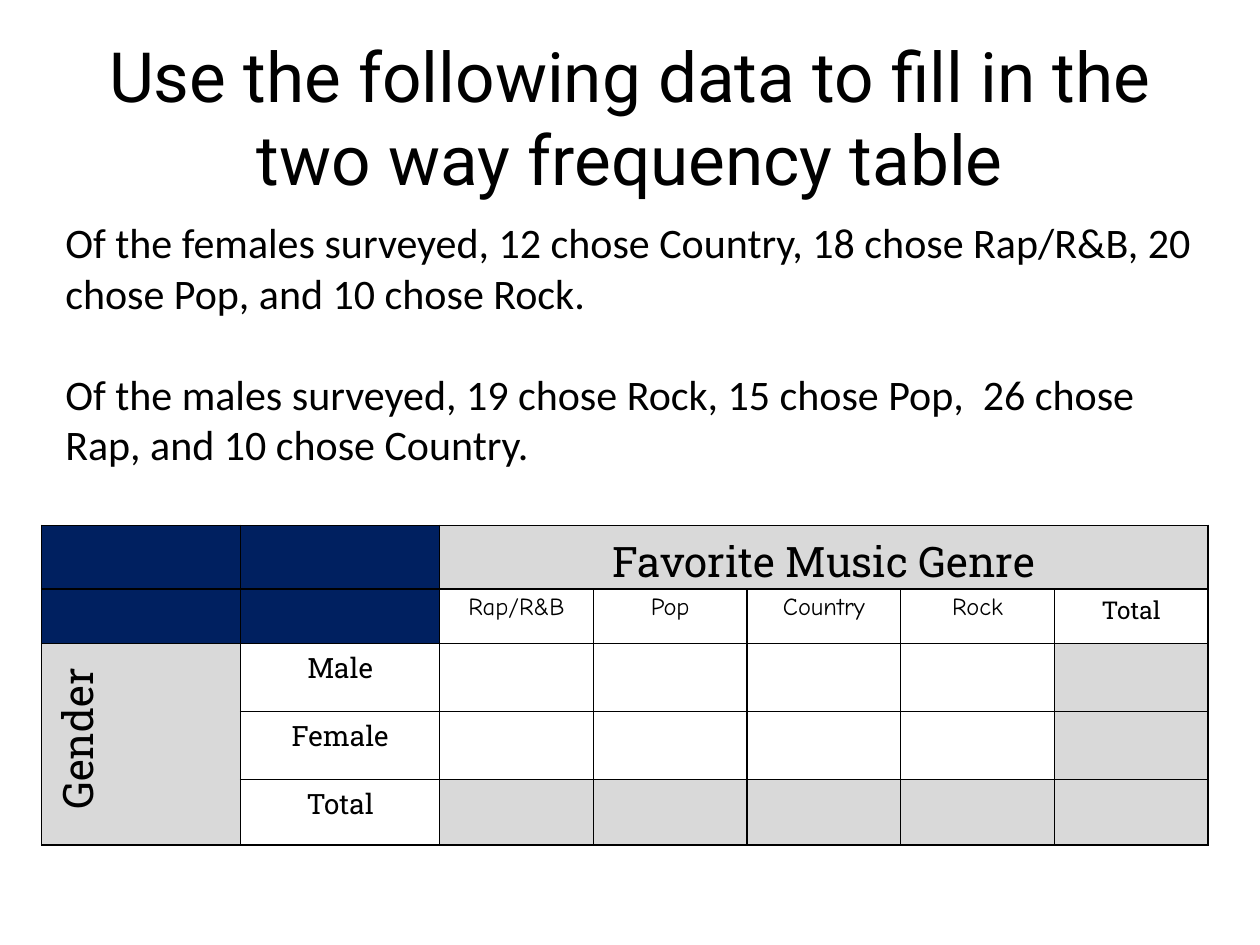
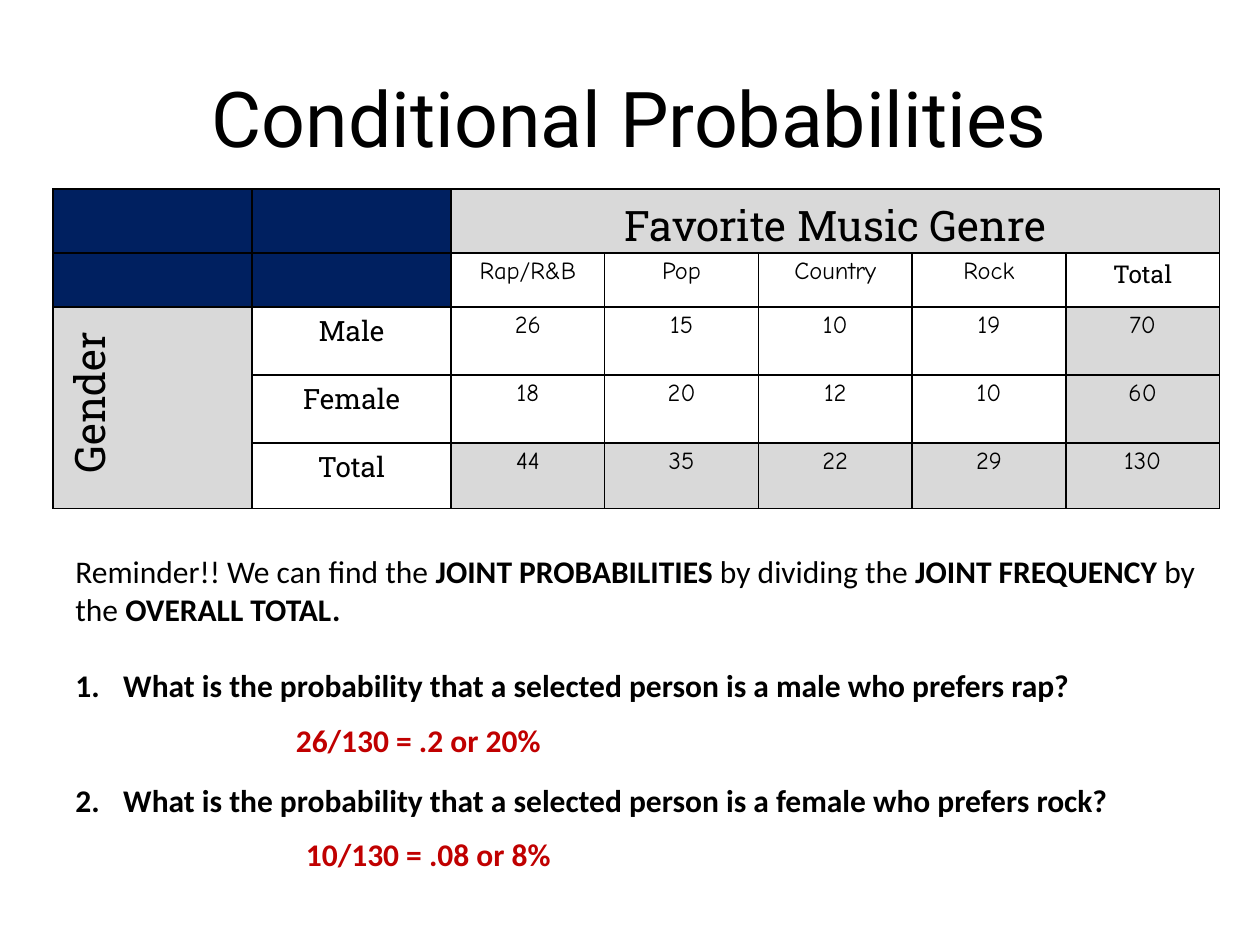
from lxml import etree
from pptx import Presentation
from pptx.dml.color import RGBColor
from pptx.enum.text import MSO_ANCHOR, MSO_AUTO_SIZE, PP_ALIGN
from pptx.oxml.ns import qn
from pptx.util import Inches, Pt

CENTER = PP_ALIGN.CENTER
MIDDLE = MSO_ANCHOR.MIDDLE
NO_FIT = MSO_AUTO_SIZE.NONE
GROW = MSO_AUTO_SIZE.SHAPE_TO_FIT_TEXT

BLACK = RGBColor(0x00, 0x00, 0x00)
NAVY = RGBColor(0x00, 0x20, 0x60)
GRAY = RGBColor(0xD9, 0xD9, 0xD9)
RED = RGBColor(0xC0, 0x00, 0x00)

TITLE_FONT = "Roboto"
BODY_FONT = "Calibri"
LABEL_FONT = "Roboto Slab"
DATA_FONT = "Comic Neue"

TITLE_ONLY = 5
COLUMN_WIDTHS = [1.58] * 2 + [1.22] * 5
ROW_HEIGHTS = [0.49, 0.43, 0.54, 0.54, 0.52]
GENRES = ["Rap/R&B", "Pop", "Country", "Rock"]
GENDERS = ["Male", "Female"]
FREQUENCIES = [[26, 15, 10, 19], [18, 20, 12, 10]]


def with_totals(rows):
    rows = [row + [sum(row)] for row in rows]
    return rows + [[sum(column) for column in zip(*rows)]]


class Deck:
    def __init__(self):
        self.presentation = Presentation()
        self.presentation.slide_width = Inches(10)
        self.presentation.slide_height = Inches(7.5)
        self.slide = None

    def format_runs(self, paragraph, font, size, color=BLACK, bold=None):
        for run in paragraph.runs:
            run.font.name = font
            run.font.size = Pt(size)
            run.font.color.rgb = color
            if bold is not None:
                run.font.bold = bold

    def add_slide(self, title, size):
        layout = self.presentation.slide_layouts[TITLE_ONLY]
        self.slide = self.presentation.slides.add_slide(layout)
        shape = self.slide.shapes.title
        shape.left, shape.top = Inches(0.5), Inches(0.3)
        shape.width, shape.height = Inches(9), Inches(1.25)
        text_frame = shape.text_frame
        text_frame.text = title
        text_frame.auto_size = NO_FIT
        text_frame.vertical_anchor = MIDDLE
        text_frame.paragraphs[0].alignment = CENTER
        self.format_runs(text_frame.paragraphs[0], TITLE_FONT, size)

    def add_text(self, left, top, width, height, texts, size, color=BLACK, bold=False):
        shape = self.slide.shapes.add_textbox(
            Inches(left), Inches(top), Inches(width), Inches(height))
        text_frame = shape.text_frame
        text_frame.word_wrap = True
        text_frame.auto_size = GROW
        for index, text in enumerate(texts):
            paragraph = text_frame.paragraphs[0] if index == 0 else text_frame.add_paragraph()
            paragraph.text = text
            self.format_runs(paragraph, BODY_FONT, size, color, bold)
        return text_frame.paragraphs

    def add_bold_phrases(self, paragraph, segments, size):
        for index, segment in enumerate(segments):
            run = paragraph.add_run()
            run.text = segment
            run.font.bold = index % 2 == 1
        self.format_runs(paragraph, BODY_FONT, size)

    def number(self, paragraph):
        properties = paragraph._p.get_or_add_pPr()
        properties.set("marL", str(Inches(0.38)))
        properties.set("indent", str(-Inches(0.38)))
        etree.SubElement(properties, qn("a:buFont"), typeface="+mj-lt")
        etree.SubElement(properties, qn("a:buAutoNum"), type="arabicPeriod")

    def style_cell(self, cell, color):
        cell.margin_left = cell.margin_right = Inches(0.06)
        cell.margin_top = cell.margin_bottom = 0
        if color is None:
            cell.fill.background()
        else:
            cell.fill.solid()
            cell.fill.fore_color.rgb = color
        properties = cell._tc.get_or_add_tcPr()
        for position, side in enumerate(("a:lnL", "a:lnR", "a:lnT", "a:lnB")):
            line = etree.Element(qn(side), w=str(Pt(1)))
            fill = etree.SubElement(line, qn("a:solidFill"))
            etree.SubElement(fill, qn("a:srgbClr"), val=str(BLACK))
            properties.insert(position, line)

    def write_cell(self, cell, text, font, size):
        cell.text_frame.text = text
        paragraph = cell.text_frame.paragraphs[0]
        paragraph.alignment = CENTER
        paragraph.line_spacing = 1.15
        self.format_runs(paragraph, font, size)

    def add_frequency_table(self, left, top, counts=()):
        row_total, column_total = len(ROW_HEIGHTS), len(COLUMN_WIDTHS)
        frame = self.slide.shapes.add_table(
            row_total, column_total, Inches(left), Inches(top),
            Inches(sum(COLUMN_WIDTHS)), Inches(sum(ROW_HEIGHTS)))
        table = frame.table
        table.first_row = table.horz_banding = False
        for column, width in zip(table.columns, COLUMN_WIDTHS):
            column.width = Inches(width)
        for row, height in zip(table.rows, ROW_HEIGHTS):
            row.height = Inches(height)

        for row in range(row_total):
            for column in range(column_total):
                color = None
                if row < 2 and column < 2:
                    color = NAVY
                elif row == 0 or column == 0:
                    color = GRAY
                elif row > 1 and column > 1 and (row == row_total - 1 or column == column_total - 1):
                    color = GRAY
                self.style_cell(table.cell(row, column), color)

        genre_heading, gender_heading = table.cell(0, 2), table.cell(2, 0)
        genre_heading.merge(table.cell(0, column_total - 1))
        gender_heading.merge(table.cell(row_total - 1, 0))
        self.write_cell(genre_heading, "Favorite Music Genre", LABEL_FONT, 24)
        self.write_cell(gender_heading, "Gender", LABEL_FONT, 24)
        gender_heading._tc.get_or_add_tcPr().set("vert", "vert270")
        gender_paragraph = gender_heading.text_frame.paragraphs[0]
        gender_paragraph._p.get_or_add_pPr().set("marL", str(Inches(0.08)))

        for column, genre in enumerate(GENRES, 2):
            self.write_cell(table.cell(1, column), genre, DATA_FONT, 14)
        self.write_cell(table.cell(1, column_total - 1), "Total", LABEL_FONT, 14)
        for row, gender in enumerate(GENDERS + ["Total"], 2):
            self.write_cell(table.cell(row, 1), gender, LABEL_FONT, 16)
        for row, values in enumerate(counts, 2):
            for column, value in enumerate(values, 2):
                self.write_cell(table.cell(row, column), str(value), DATA_FONT, 14)


def build_data_slide(deck):
    deck.add_slide("Use the following data to fill in the two way frequency table", 39.6)
    deck.add_frequency_table(0.33, 4.17)
    females, males = deck.add_text(0.42, 1.67, 9.17, 2.12, [
        "Of the females surveyed, 12 chose Country, 18 chose Rap/R&B, 20 chose Pop, and 10 chose Rock.",
        "Of the males surveyed, 19 chose Rock, 15 chose Pop,  26 chose Rap, and 10 chose Country.",
    ], 24)
    males.space_before = Pt(29)


def build_probability_slide(deck):
    deck.add_slide("Conditional Probabilities", 44)
    deck.add_frequency_table(0.42, 1.5, with_totals(FREQUENCIES))
    reminder, *questions = deck.add_text(0.5, 4.33, 9.17, 2.22, [
        "",
        "What is the probability that a selected person is a male who prefers rap?",
        "What is the probability that a selected person is a female who prefers rock?",
    ], 18, bold=True)
    deck.add_bold_phrases(reminder, [
        "Reminder!! We can find the ", "JOINT PROBABILITIES", " by dividing the ",
        "JOINT FREQUENCY ", "by the ", "OVERALL TOTAL.",
    ], 18)
    for question, gap in zip(questions, (22, 44)):
        question.space_before = Pt(gap)
        deck.number(question)
    for left, top, answer in ((2.25, 5.67, "26/130 = .2 or 20%"),
                              (2.33, 6.58, "10/130 = .08 or 8%")):
        deck.add_text(left, top, 3.33, 0.4, [answer], 18, RED, True)


def main():
    deck = Deck()
    build_data_slide(deck)
    build_probability_slide(deck)
    deck.presentation.save("out.pptx")


if __name__ == "__main__":
    main()
